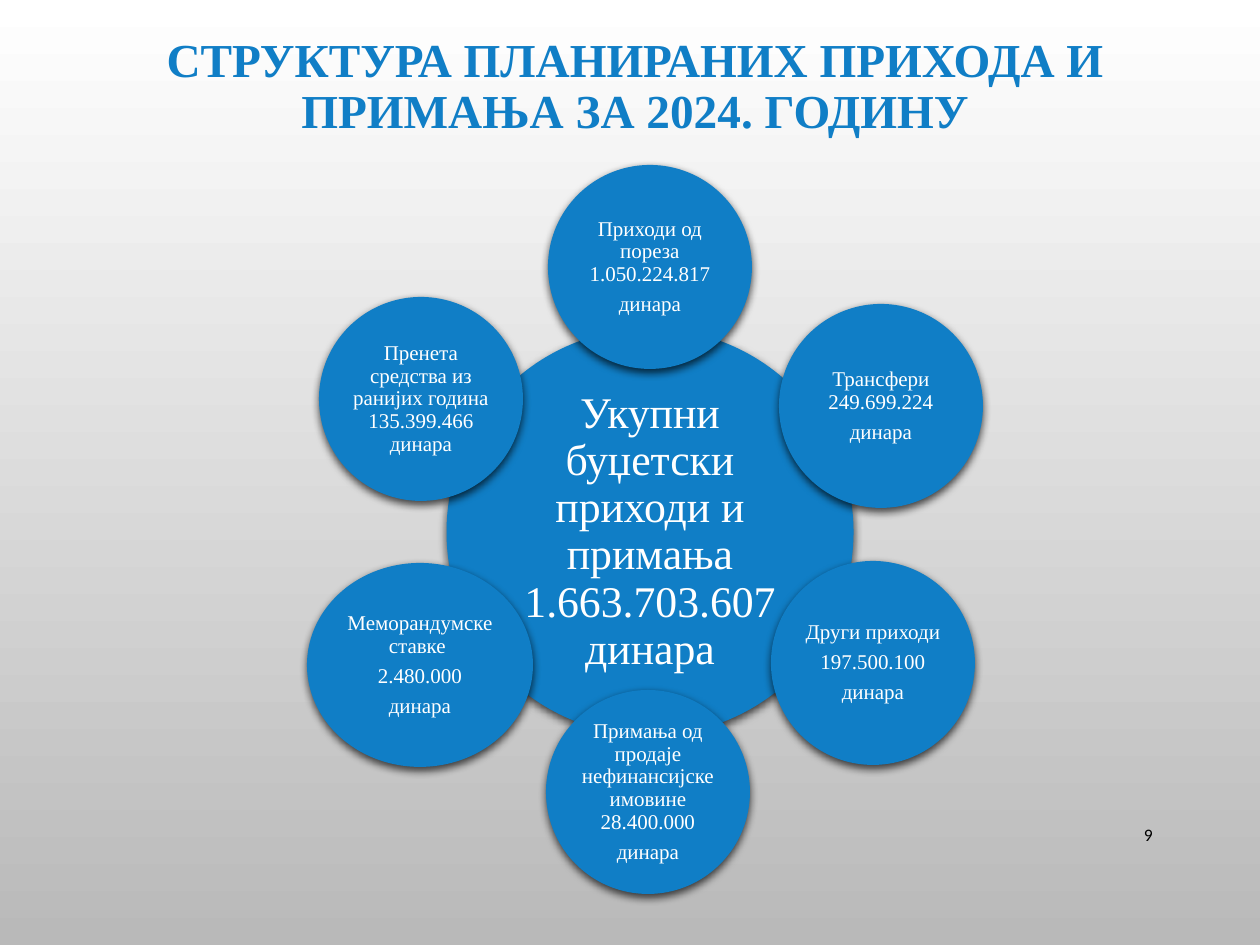
from collections import namedtuple
from dataclasses import dataclass

from lxml import etree
from pptx import Presentation
from pptx.dml.color import RGBColor
from pptx.enum import shapes, text
from pptx.oxml import ns
from pptx.util import Pt

EMU_PER_PX = 914400 / 126

Box = namedtuple("Box", "left top width height")
Satellite = namedtuple("Satellite", "dx dy width paragraphs")


@dataclass(frozen=True)
class Theme:
    blue: str = "107EC6"
    white: str = "FFFFFF"
    black: str = "000000"
    grey: str = "B9B9B9"
    serif: str = "Times New Roman"
    sans: str = "Calibri"
    title_size: int = 27
    hub_size: int = 25
    satellite_size: int = 12
    number_size: int = 10


THEME = Theme()
HUB_DIAMETER = 407
SATELLITE_DIAMETER = 204
HUB_TEXT = ["Укупни буџетски приходи и примања 1.663.703.607 динара"]

# Centres are offsets from the middle of the hub
SATELLITES = [
    Satellite(0, -265, 204, ["Приходи од пореза 1.050.224.817", "динара"]),
    Satellite(231, -126, 204, ["Трансфери 249.699.224", "динара"]),
    Satellite(223, 131, 204, ["Други приходи", "197.500.100", "динара"]),
    Satellite(-2, 260, 204,
              ["Примања од продаје нефинансијске имовине 28.400.000", "динара"]),
    Satellite(-230, 133, 226, ["Mеморандумске ставке ", "2.480.000", "динара"]),
    Satellite(-229, -133, 204,
              ["Пренета средства из ранијих година 135.399.466 динара"]),
]


def px(length):
    return round(length * EMU_PER_PX)


def to_emu(box):
    return [px(length) for length in box]


def fill_text(shape, paragraphs, size, color, font=THEME.serif, bold=False,
              align=text.PP_ALIGN.CENTER, spacing=0.9, space_after=0, margin=None):
    frame = shape.text_frame
    frame.text = "\n".join(paragraphs)
    frame.word_wrap = True
    frame.vertical_anchor = text.MSO_ANCHOR.MIDDLE
    if margin is not None:
        frame.margin_left = frame.margin_right = px(margin)
        frame.margin_top = frame.margin_bottom = px(margin)
    for paragraph in frame.paragraphs:
        paragraph.alignment = align
        paragraph.line_spacing = spacing
        paragraph.space_after = Pt(space_after)
        for run in paragraph.runs:
            run.font.name = font
            run.font.size = Pt(size)
            run.font.bold = bold
            run.font.color.rgb = RGBColor.from_string(color)


def add_soft_shadow(shape):
    shape.shadow.inherit = False
    effects = shape._element.spPr.find(ns.qn("a:effectLst"))
    shadow = etree.SubElement(effects, ns.qn("a:outerShdw"), blurRad=str(Pt(5)),
                              dist=str(Pt(2)), dir="5400000", rotWithShape="0")
    color = etree.SubElement(shadow, ns.qn("a:srgbClr"), val=THEME.black)
    etree.SubElement(color, ns.qn("a:alpha"), val="69000")


def add_circle(slide, center_x, center_y, width, height, paragraphs, size, margin):
    box = Box(center_x - width / 2, center_y - height / 2, width, height)
    circle = slide.shapes.add_shape(shapes.MSO_SHAPE.OVAL, *to_emu(box))
    circle.fill.solid()
    circle.fill.fore_color.rgb = RGBColor.from_string(THEME.blue)
    circle.line.fill.background()
    add_soft_shadow(circle)
    fill_text(circle, paragraphs, size, THEME.white,
              space_after=0.35 * size, margin=margin)


def set_background(slide):
    fill = slide.background.fill
    fill.gradient()
    fill.gradient_angle = 270
    for stop, color in zip(fill.gradient_stops, (THEME.white, THEME.grey)):
        stop.color.rgb = RGBColor.from_string(color)


def add_title(slide, box):
    title = slide.shapes.add_textbox(*to_emu(box))
    fill_text(title, ["СТРУКТУРА ПЛАНИРАНИХ ПРИХОДА И ПРИМАЊА ЗА 2024. ГОДИНУ"],
              THEME.title_size, THEME.blue, bold=True)


def add_page_number(slide, box):
    number = slide.shapes.add_textbox(*to_emu(box))
    fill_text(number, ["9"], THEME.number_size, THEME.black, font=THEME.sans,
              align=text.PP_ALIGN.RIGHT, spacing=1)


def add_revenue_diagram(slide, box):
    center_x = box.left + box.width / 2
    center_y = box.top + box.height / 2

    # Hub with the total
    add_circle(slide, center_x, center_y, HUB_DIAMETER, HUB_DIAMETER,
               HUB_TEXT, THEME.hub_size, margin=4)

    # Sources of revenue around it
    for satellite in SATELLITES:
        add_circle(slide, center_x + satellite.dx, center_y + satellite.dy,
                   satellite.width, SATELLITE_DIAMETER, satellite.paragraphs,
                   THEME.satellite_size, margin=2)


def main():
    presentation = Presentation()
    presentation.slide_width = px(1260)
    presentation.slide_height = px(945)
    slide = presentation.slides.add_slide(presentation.slide_layouts[6])

    set_background(slide)
    add_title(slide, Box(68, 34, 1134, 107))
    add_page_number(slide, Box(1086, 810, 79, 50))
    add_revenue_diagram(slide, Box(307, 165, 686, 734))

    presentation.save("out.pptx")


if __name__ == "__main__":
    main()
